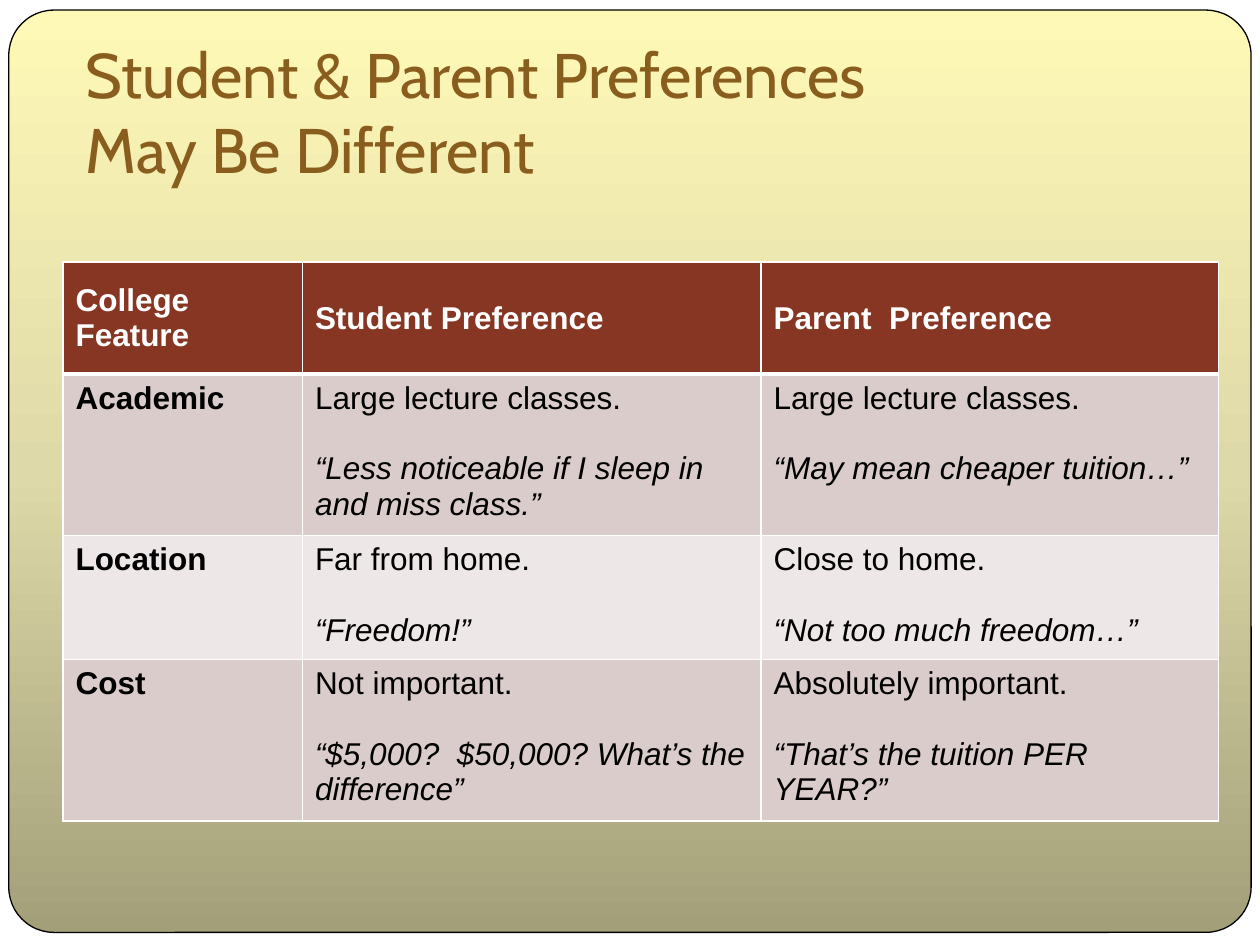
import copy

import pptx
import pptx.dml.color
import pptx.enum.shapes
import pptx.enum.text
import pptx.oxml
import pptx.oxml.ns
import pptx.util

Inches = pptx.util.Inches
Pt = pptx.util.Pt
RGBColor = pptx.dml.color.RGBColor
Anchor = pptx.enum.text.MSO_ANCHOR
qn = pptx.oxml.ns.qn

WHITE = RGBColor(0xFF, 0xFF, 0xFF)
BLACK = RGBColor(0, 0, 0)
BROWN = RGBColor(0x89, 0x5D, 0x1D)
RUST = RGBColor(0x87, 0x36, 0x24)
BANDS = [RGBColor(0xD9, 0xCC, 0xCB), RGBColor(0xED, 0xE7, 0xE7)]
GRADIENT = [
    (0, RGBColor(0xA3, 0x9F, 0x79)),
    (0.5, RGBColor(0xDE, 0xD9, 0xA8)),
    (1, RGBColor(0xFF, 0xF9, 0xB7)),
]

HEADINGS = ["College Feature", "Student Preference", "Parent  Preference"]
# Feature, then a statement and a quote for student and for parent
FEATURES = [
    ("Academic",
     ("Large lecture classes.", "“Less noticeable if I sleep in and miss class.”"),
     ("Large lecture classes.", "“May mean cheaper tuition…”")),
    ("Location",
     ("Far from home.", "“Freedom!”"),
     ("Close to home.", "“Not too much freedom…”")),
    ("Cost",
     ("Not important.", "“$5,000?  $50,000? What’s the difference”"),
     ("Absolutely important.", "“That’s the tuition PER YEAR?”")),
]
COLUMN_WIDTHS = [1.9, 3.64, 3.63]
ROW_HEIGHTS = [0.89, 1.22, 0.94, 1.22]


def style_font(font, name, size, color, bold=False, italic=False):
    font.name, font.size = name, Pt(size)
    font.color.rgb = color
    font.bold, font.italic = bold, italic


def add_panel(page):
    panel = page.shapes.add_shape(
        pptx.enum.shapes.MSO_SHAPE.ROUNDED_RECTANGLE,
        Inches(0.07), Inches(0.08), Inches(9.86), Inches(7.32))
    panel.adjustments[0] = 0.049
    panel.shadow.inherit = False
    panel.line.color.rgb = BLACK
    panel.line.width = Pt(0.75)
    panel.fill.gradient()
    panel.fill.gradient_angle = 90
    # The default gradient has two stops; a third is needed
    stop_list = next(panel.element.iter(qn("a:gsLst")))
    stop_list.append(copy.deepcopy(stop_list[-1]))
    for stop, (position, color) in zip(panel.fill.gradient_stops, GRADIENT):
        stop.position = position
        stop.color.rgb = color


def add_title(page):
    box = page.shapes.add_textbox(Inches(0.58), Inches(0.33), Inches(8.5), Inches(1.25))
    frame = box.text_frame
    frame.word_wrap = True
    frame.vertical_anchor = Anchor.BOTTOM
    frame.margin_bottom = Inches(0.1)
    frame.text = "Student & Parent Preferences \vMay Be Different"
    for span in frame.paragraphs[0].runs:
        style_font(span.font, "Cabin", 36, BROWN)


def set_borders(cell, top, bottom):
    properties = cell._tc.get_or_add_tcPr()
    widths = {"lnL": 1, "lnR": 1, "lnT": top, "lnB": bottom}
    for index, (side, width) in enumerate(widths.items()):
        properties.insert(index, pptx.oxml.parse_xml(
            f'<a:{side} {pptx.oxml.ns.nsdecls("a")} w="{Pt(width)}">'
            f'<a:solidFill><a:srgbClr val="{WHITE}"/></a:solidFill></a:{side}>'))


def fill_cell(cell, lines, background, color, bold):
    cell.fill.solid()
    cell.fill.fore_color.rgb = background
    cell.text_frame.text = "\n".join(lines)
    for index, para in enumerate(cell.text_frame.paragraphs):
        is_quote = index > 0
        if is_quote:
            para.space_before = Pt(20.3)
        style_font(para.runs[0].font, "Arial", 18, color, bold, is_quote)


def add_preferences(page):
    table = page.shapes.add_table(
        len(ROW_HEIGHTS), len(COLUMN_WIDTHS), Inches(0.5), Inches(2.08),
        Inches(sum(COLUMN_WIDTHS)), Inches(sum(ROW_HEIGHTS))).table
    for column, width in zip(table.columns, COLUMN_WIDTHS):
        column.width = Inches(width)
    for row, height in zip(table.rows, ROW_HEIGHTS):
        row.height = Inches(height)

    # Header row
    for cell, heading in zip(table.rows[0].cells, HEADINGS):
        fill_cell(cell, [heading], RUST, WHITE, True)
        cell.vertical_anchor = Anchor.MIDDLE
        set_borders(cell, 1, 3)

    # Banded feature rows
    for index, (feature, *opinions) in enumerate(FEATURES):
        cells = table.rows[index + 1].cells
        for column, (cell, lines) in enumerate(zip(cells, [(feature,), *opinions])):
            fill_cell(cell, lines, BANDS[index % 2], BLACK, column == 0)
            set_borders(cell, 3 if index == 0 else 1, 1)


def main():
    deck = pptx.Presentation()
    deck.slide_width, deck.slide_height = Inches(10), Inches(7.5)
    page = deck.slides.add_slide(deck.slide_layouts[6])
    page.background.fill.solid()
    page.background.fill.fore_color.rgb = WHITE
    add_panel(page)
    add_title(page)
    add_preferences(page)
    deck.save("out.pptx")


if __name__ == "__main__":
    main()
